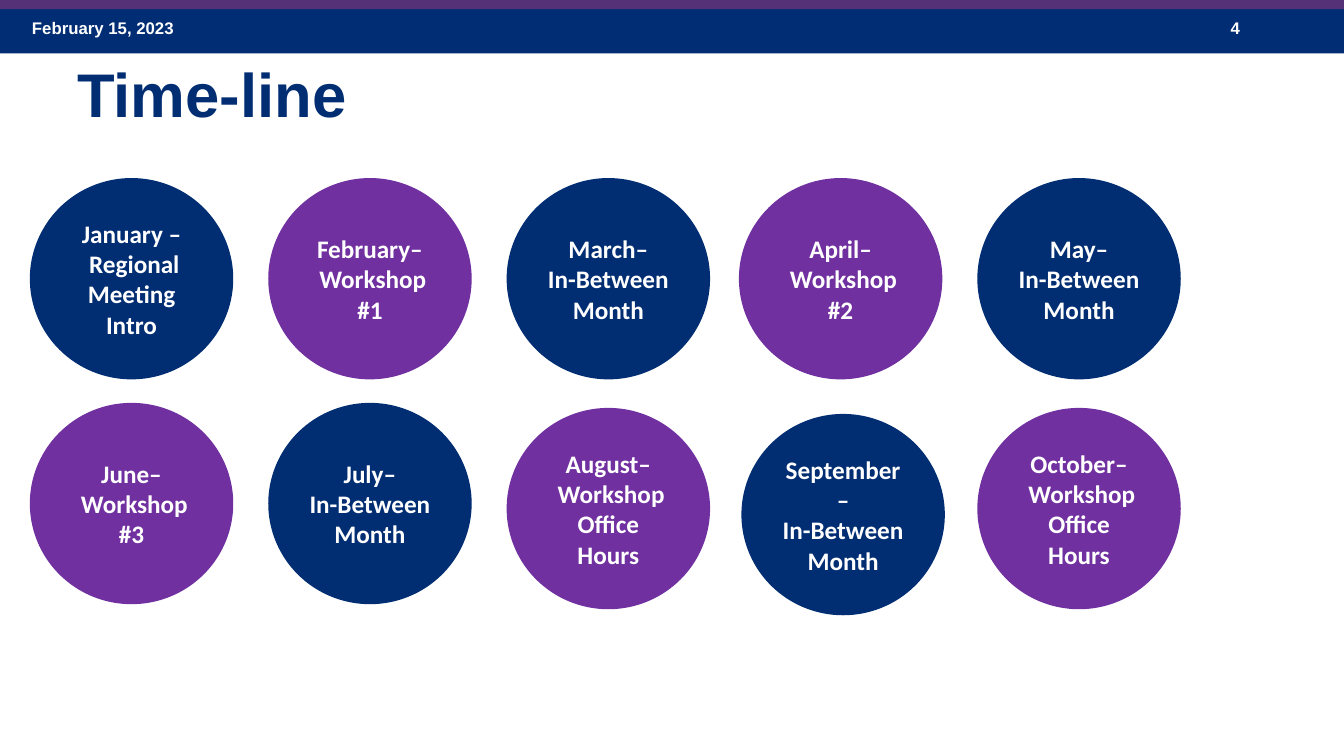
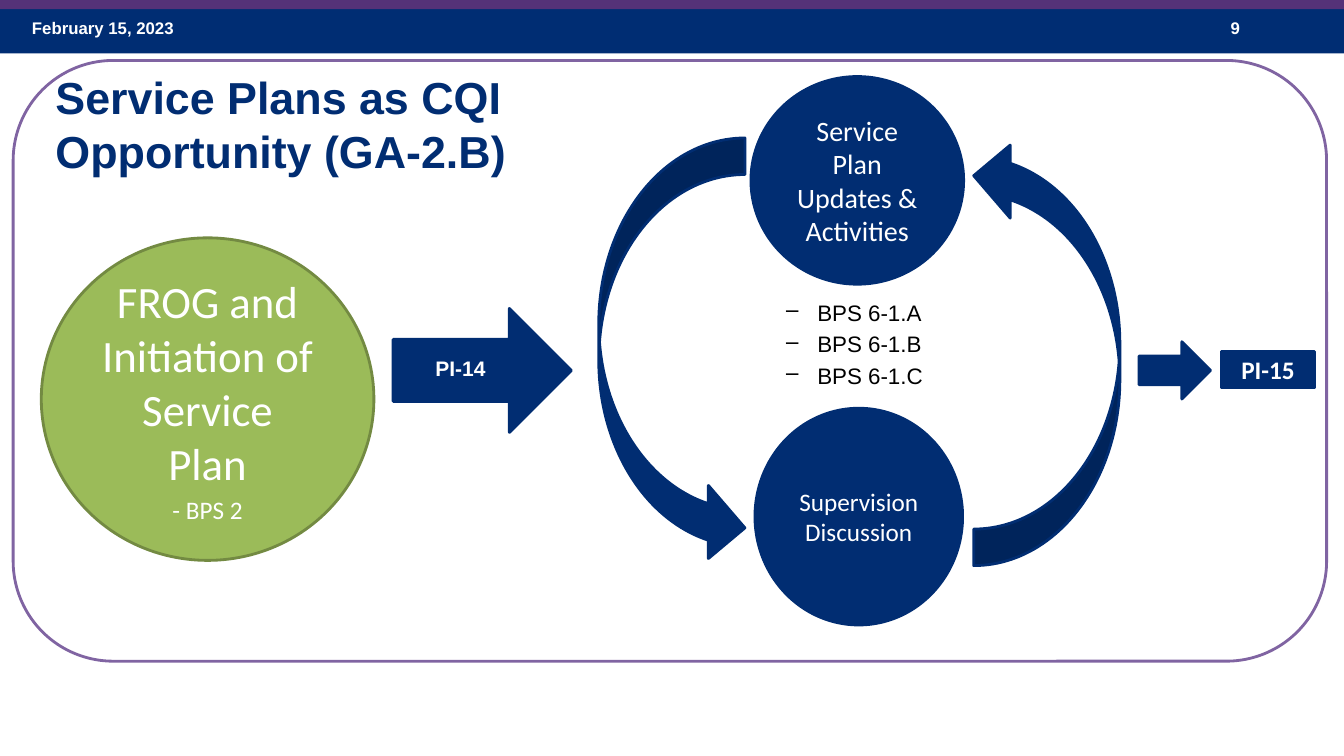
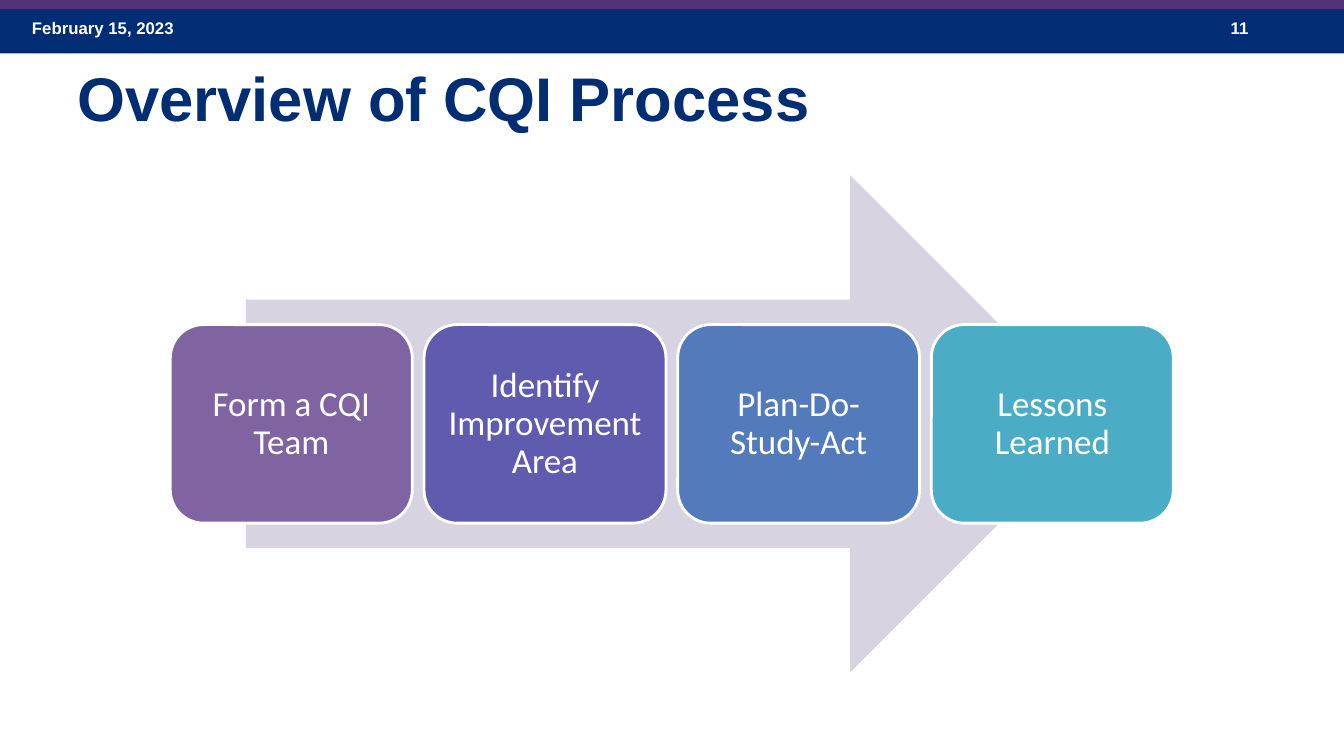
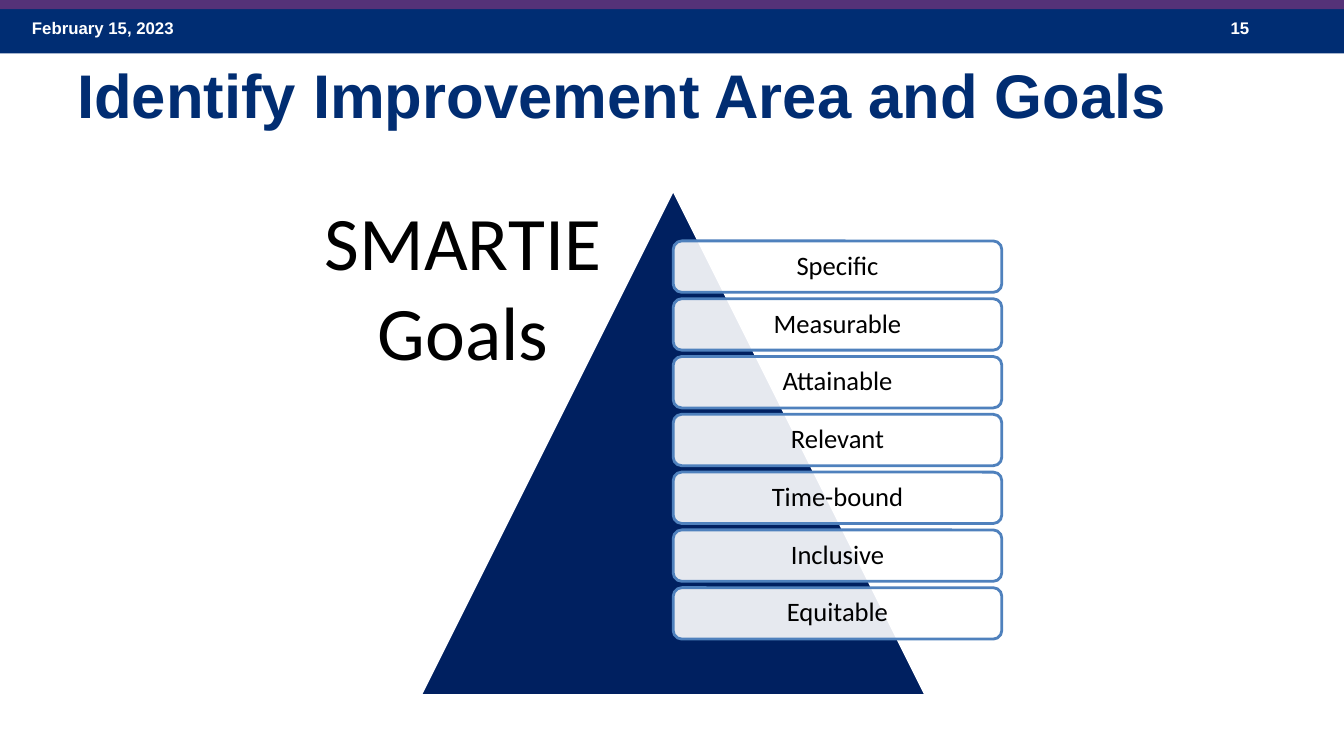
"""Build four slides on a continuous quality improvement (CQI) programme."""
import dataclasses

import lxml.etree
import pptx
import pptx.dml.color
import pptx.enum.shapes
import pptx.enum.text
import pptx.oxml.ns
import pptx.util

Pt = pptx.util.Pt
SHAPE = pptx.enum.shapes.MSO_SHAPE
ALIGN = pptx.enum.text.PP_ALIGN
ANCHOR = pptx.enum.text.MSO_ANCHOR

COLORS = {
    "band": "002D73",
    "stripe": "553278",
    "navy": "012D72",
    "purple": "7030A0",
    "lavender": "8064A2",
    "pale": "D8D3E0",
    "green": "9BBB59",
    "olive": "738A42",
    "indigo": "5F5BAE",
    "blue": "537ABA",
    "teal": "4BACC6",
    "midnight": "002060",
    "outline": "4F81BD",
    "white": "FFFFFF",
    "black": "000000",
}
HEADING_FONT = "Arial"
BODY_FONT = "Calibri"
PAGE_WIDTH, PAGE_HEIGHT = 960, 540
LINE_WIDTH = 2
DATE = "February 15, 2023"

MONTHS = [
    ("January –", " Regional Meeting Intro", 0, 0),
    ("February–", " Workshop #1", 170.3, 0),
    ("March–", "In-Between Month", 340.6, 0),
    ("April–", " Workshop #2", 506.5, 0),
    ("May–", "In-Between Month", 676.8, 0),
    ("June–", " Workshop #3", 0, 160.6),
    ("July–", "In-Between Month", 170.3, 160.6),
    ("August–", " Workshop Office Hours", 340.6, 164.2),
    ("September–", "In-Between Month", 508.3, 168.5),
    ("October–", " Workshop Office Hours", 676.8, 164.2),
]
STEPS = [
    ("Form a CQI Team", "lavender"),
    ("Identify Improvement Area", "indigo"),
    ("Plan-Do-Study-Act", "blue"),
    ("Lessons Learned", "teal"),
]
GOALS = ["Specific", "Measurable", "Attainable", "Relevant",
         "Time-bound", "Inclusive", "Equitable"]


@dataclasses.dataclass
class Box:
    """A rectangle in points."""

    left: float
    top: float
    width: float
    height: float

    def inner(self, left, top, width, height):
        """Return a box offset from this one's top left corner."""
        return Box(self.left + left, self.top + top, width, height)

    def lengths(self):
        """Return the four lengths that python-pptx expects."""
        return [Pt(value) for value in dataclasses.astuple(self)]


def rgb(name):
    """Return the named colour."""
    return pptx.dml.color.RGBColor.from_string(COLORS[name])


def set_text(shape, lines, size, color="white", bold=False, font=BODY_FONT,
             align=ALIGN.CENTER, anchor=ANCHOR.MIDDLE, wrap=True):
    """Fill a shape with one paragraph per line and return the paragraphs."""
    frame = shape.text_frame
    frame.text = "\n".join(lines)
    frame.word_wrap = wrap
    frame.vertical_anchor = anchor
    for para in frame.paragraphs:
        para.alignment = align
        para.font.name = font
        para.font.size = Pt(size)
        para.font.bold = bold
        para.font.color.rgb = rgb(color)
    return frame.paragraphs


def add_shape(page, kind, box, fill=None, line=None):
    """Add a flat preset shape with the named fill and line."""
    shape = page.shapes.add_shape(kind, *box.lengths())
    shape.shadow.inherit = False
    if fill:
        shape.fill.solid()
        shape.fill.fore_color.rgb = rgb(fill)
    else:
        shape.fill.background()
    if line:
        shape.line.color.rgb = rgb(line)
        shape.line.width = Pt(LINE_WIDTH)
    else:
        shape.line.fill.background()
    return shape


def add_label(page, box, lines, size, color, **style):
    """Add a text box anchored at its top."""
    label = page.shapes.add_textbox(*box.lengths())
    set_text(label, lines, size, color, anchor=ANCHOR.TOP, **style)
    return label


def set_margins(shape, margin):
    """Give a shape the same margin on all sides."""
    frame = shape.text_frame
    frame.margin_left = frame.margin_right = Pt(margin)
    frame.margin_top = frame.margin_bottom = Pt(margin)


def add_header(page, box, number):
    """Draw the band with the date and the slide number."""
    add_shape(page, SHAPE.RECTANGLE, box, "band")
    add_shape(page, SHAPE.RECTANGLE, box.inner(0, -8.6, box.width, 8.6), "stripe")
    for left, width, text in ((15.8, 224, DATE), (872, 72, str(number))):
        add_label(page, box.inner(left, 2.9, width, 28.8), [text], 12, "white",
                  bold=True, font=HEADING_FONT, align=ALIGN.LEFT)


def add_page(deck, number, title, box, size=44):
    """Add a slide with the shared header and title style."""
    page = deck.slides.add_slide(deck.slide_layouts[5])
    add_header(page, Box(0, 6.5, PAGE_WIDTH, 31.7), number)
    heading = page.shapes.title
    heading.left, heading.top, heading.width, heading.height = box.lengths()
    set_text(heading, [title], size, "navy", bold=True, font=HEADING_FONT,
             align=ALIGN.LEFT, anchor=ANCHOR.TOP)
    heading.text_frame.auto_size = pptx.enum.text.MSO_AUTO_SIZE.NONE
    return page


def add_timeline(page, box):
    """Draw the months as circles in alternating colours."""
    for index, (month, activity, left, top) in enumerate(MONTHS):
        color = ("navy", "purple")[index % 2]
        circle = add_shape(page, SHAPE.OVAL, box.inner(left, top, 143.3, 141.8),
                           color, color)
        set_text(circle, [month, activity], 18, bold=True)


def add_dashes(paragraphs):
    """Give paragraphs a hanging dash."""
    for para in paragraphs:
        properties = para._p.get_or_add_pPr()
        properties.set("marL", str(Pt(58.3)))
        properties.set("indent", str(Pt(-22.3)))
        lxml.etree.SubElement(properties, pptx.oxml.ns.qn("a:buChar"), char="–")


def add_service_cycle(page, box):
    """Draw the service plan cycle inside a rounded frame."""
    plan = add_shape(page, SHAPE.OVAL, box.inner(20.1, 126.7, 237.6, 230.4),
                     "green", "olive")
    paragraphs = set_text(
        plan, ["FROG and Initiation of Service Plan", "- BPS 2"], 32)
    paragraphs[1].font.size = Pt(18)
    paragraphs[1].space_before = Pt(3.6)

    for kind, area, rotation in (
        (SHAPE.RIGHT_ARROW, (271.4, 177.1, 127.4, 88.6), 0),
        (SHAPE.RIGHT_ARROW, (804.2, 200.9, 51.1, 41), 0),
        (SHAPE.CURVED_RIGHT_ARROW, (418.3, 55.4, 104.4, 304.6), 0),
        (SHAPE.CURVED_RIGHT_ARROW, (686.1, 56.2, 104.4, 304.6), 180),
    ):
        arrow = add_shape(page, kind, box.inner(*area), "navy", "navy")
        arrow.rotation = rotation

    for kind, area, text, size, bold in (
        (SHAPE.FLOWCHART_CONNECTOR, (527, 11.5, 151.9, 148.3),
         "Service Plan Updates & Activities", 20, False),
        (SHAPE.FLOWCHART_CONNECTOR, (529.9, 248.4, 148.3, 154.8),
         "Supervision Discussion", 18, False),
        (SHAPE.RECTANGLE, (863.2, 208.1, 66.2, 25.9), "PI-15", 18, True),
    ):
        node = add_shape(page, kind, box.inner(*area), "navy", "navy")
        set_text(node, [text], size, bold=bold)

    standards = page.shapes.add_textbox(*box.inner(509, 167, 231.8, 81.4).lengths())
    standards.text_frame.text = "BPS 6-1.A\nBPS 6-1.B\nBPS 6-1.C"
    standards.text_frame.word_wrap = True
    add_dashes(standards.text_frame.paragraphs)
    for para in standards.text_frame.paragraphs:
        para.font.name = HEADING_FONT
        para.font.size = Pt(16)
        para.font.color.rgb = rgb("black")
    for para in standards.text_frame.paragraphs[1:]:
        para.space_before = Pt(3.2)

    indicator = add_label(page, box.inner(258.4, 207.4, 86.4, 26.6), ["PI-14"], 15,
                          "white", bold=True, font=HEADING_FONT, align=ALIGN.LEFT)
    indicator.text_frame.margin_left = Pt(43.2)
    indicator.text_frame.margin_right = Pt(0)
    add_shape(page, SHAPE.ROUNDED_RECTANGLE, box, line="lavender")


def add_process(page, box):
    """Draw the steps as equal cards over a wide arrow."""
    add_shape(page, SHAPE.RIGHT_ARROW, box.inner(54, 0, 609.1, box.height), "pale")
    width, height = 172.8, 141.8
    pitch = (box.width - width) / (len(STEPS) - 1)
    for index, (step, color) in enumerate(STEPS):
        area = box.inner(index * pitch, (box.height - height) / 2, width, height)
        card = add_shape(page, SHAPE.ROUNDED_RECTANGLE, area, color, "white")
        set_margins(card, 7.2)
        set_text(card, [step], 25)[0].line_spacing = 0.9


def add_goal_pyramid(page, box):
    """Draw the goals as translucent bars over a triangle."""
    add_shape(page, SHAPE.ISOSCELES_TRIANGLE, box, "midnight", "white")
    for index, goal in enumerate(GOALS):
        area = box.inner(box.width / 2, 36.7 + index * 41.28, 234.7, 36.7)
        bar = add_shape(page, SHAPE.ROUNDED_RECTANGLE, area, "white", "outline")
        color = bar.element.spPr.find("a:solidFill/a:srgbClr", pptx.oxml.ns._nsmap)
        lxml.etree.SubElement(color, pptx.oxml.ns.qn("a:alpha"), val="90000")
        set_margins(bar, 5.8)
        set_text(bar, [goal], 19, "black")[0].line_spacing = 0.9
    add_label(page, box.inner(-76.3, 0, 213.8, 138.2), ["SMARTIE", "Goals"], 54,
              "black", wrap=False)


def main():
    """Build and save the deck."""
    deck = pptx.Presentation()
    deck.slide_width, deck.slide_height = Pt(PAGE_WIDTH), Pt(PAGE_HEIGHT)

    page = add_page(deck, 4, "Time-line", Box(48, 36, 864, 98.6))
    add_timeline(page, Box(22.3, 128.2, 820.1, 310.3))

    page = add_page(deck, 9, "Service Plans as CQI Opportunity (GA-2.B)",
                    Box(32.4, 46.1, 395.3, 85), 32)
    add_service_cycle(page, Box(9.4, 43.2, 938.2, 429.1))

    page = add_page(deck, 11, "Overview of CQI Process", Box(48, 38.9, 864, 98.6))
    add_process(page, Box(121.7, 125.3, 716.4, 355))

    page = add_page(deck, 15, "Identify Improvement Area and Goals",
                    Box(48, 36.7, 864, 98.6))
    add_goal_pyramid(page, Box(300.2, 135.4, 361.4, 361.4))

    deck.save("out.pptx")


if __name__ == "__main__":
    main()
